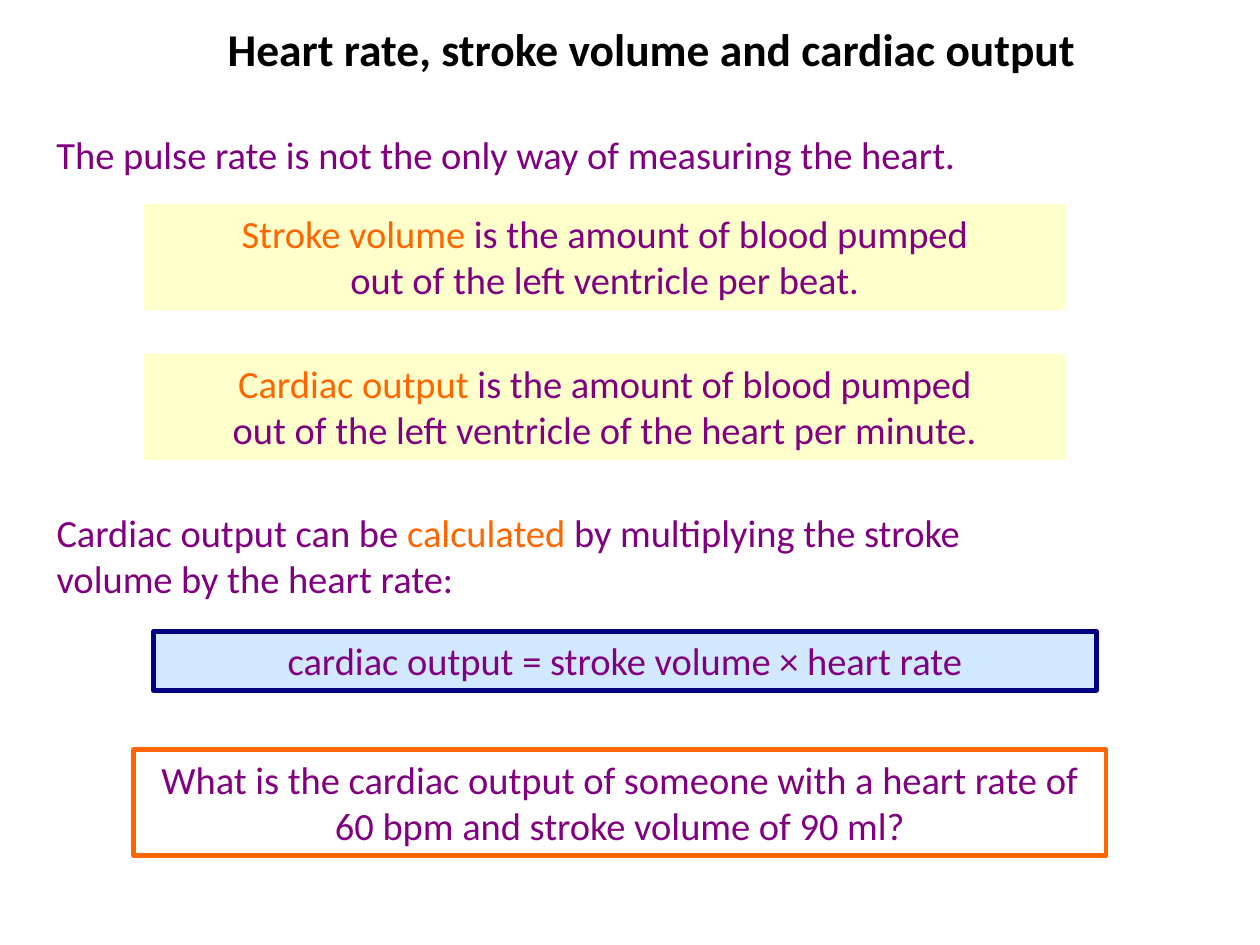
from pptx import Presentation
from pptx.dml.color import RGBColor
from pptx.enum.shapes import MSO_SHAPE
from pptx.enum.text import MSO_ANCHOR, PP_ALIGN
from pptx.util import Inches, Pt

COLOURS = {
    "title": "000000",
    "text": "800080",
    "accent": "FF6600",
    "definition": "FFFFCC",
    "formula": "D1E8FF",
    "formula_line": "000080",
}
FONT = "Calibri"
BODY_SIZE = 22


def colour(name):
    return RGBColor.from_string(COLOURS[name])


def style_font(font, size, colour_name, bold=False):
    font.name = FONT
    font.size = Pt(size)
    font.bold = bold
    font.color.rgb = colour(colour_name)


def write_paragraphs(box, paragraphs, align):
    """Fill a box; each paragraph is a list of (text, colour name) spans."""
    frame = box.text_frame
    frame.word_wrap = True
    frame.vertical_anchor = MSO_ANCHOR.TOP
    for index, spans in enumerate(paragraphs):
        para = frame.paragraphs[0] if index == 0 else frame.add_paragraph()
        para.alignment = align
        style_font(para.font, BODY_SIZE, "text")
        for text, colour_name in spans:
            span = para.add_run()
            span.text = text
            span.font.color.rgb = colour(colour_name)


def add_title(page, text):
    title = page.shapes.title
    title.left, title.top = Inches(1.02), Inches(0.08)
    title.width, title.height = Inches(8.31), Inches(0.6)
    title.text_frame.text = text
    title.text_frame.vertical_anchor = MSO_ANCHOR.MIDDLE
    para = title.text_frame.paragraphs[0]
    para.alignment = PP_ALIGN.CENTER
    style_font(para.font, 26, "title", bold=True)


def add_statement(page, left, top, width, height, spans):
    box = page.shapes.add_textbox(
        Inches(left), Inches(top), Inches(width), Inches(height))
    write_paragraphs(box, [spans], PP_ALIGN.LEFT)


def add_panel(page, left, top, width, height, paragraphs,
              fill=None, line=None, line_width=0):
    box = page.shapes.add_shape(
        MSO_SHAPE.RECTANGLE,
        Inches(left), Inches(top), Inches(width), Inches(height))
    box.shadow.inherit = False
    if fill:
        box.fill.solid()
        box.fill.fore_color.rgb = colour(fill)
    else:
        box.fill.background()
    if line:
        box.line.color.rgb = colour(line)
        box.line.width = Pt(line_width)
    else:
        box.line.fill.background()
    write_paragraphs(box, paragraphs, PP_ALIGN.CENTER)


def main():
    deck = Presentation()
    deck.slide_width, deck.slide_height = Inches(10), Inches(7.5)
    page = deck.slides.add_slide(deck.slide_layouts[5])

    add_title(page, "Heart rate, stroke volume and cardiac output")
    add_statement(page, 0.35, 0.99, 9.06, 0.47, [
        ("The pulse rate is not the only way of measuring the heart.", "text")])

    # Definitions
    definitions = [
        ("Stroke volume", "out of the left ventricle per beat."),
        ("Cardiac output", "out of the left ventricle of the heart per minute."),
    ]
    for index, (term, ending) in enumerate(definitions):
        add_panel(page, 1.14, 1.62 + index * 1.19, 7.32, 0.84, [
            [(term, "accent"), (" is the amount of blood pumped", "text")],
            [(ending, "text")],
        ], fill="definition")

    # Calculation
    add_statement(page, 0.35, 3.99, 7.88, 0.84, [
        ("Cardiac output can be ", "text"),
        ("calculated", "accent"),
        (" by multiplying the stroke volume by the heart rate:", "text")])
    add_panel(page, 1.22, 5.01, 7.48, 0.47,
              [[("cardiac output = stroke volume × heart rate", "text")]],
              fill="formula", line="formula_line", line_width=2.75)

    # Question
    add_panel(page, 1.06, 5.95, 7.72, 0.84,
              [[("What is the cardiac output of someone with a heart rate of "
                 "60 bpm and stroke volume of 90 ml?", "text")]],
              line="accent", line_width=2.5)

    deck.save("out.pptx")


if __name__ == "__main__":
    main()
